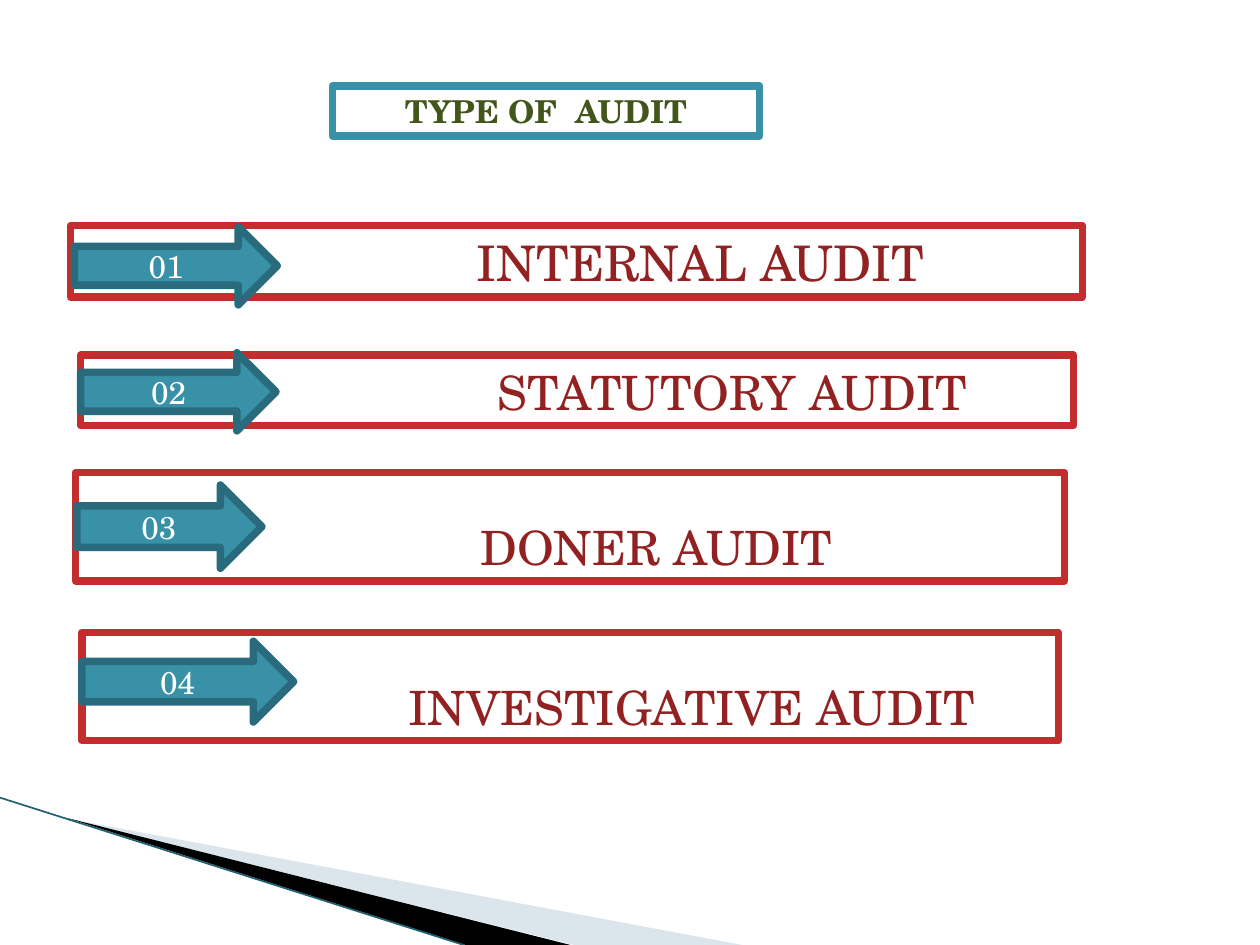
from lxml.etree import SubElement
from pptx import Presentation
from pptx.dml.color import RGBColor
from pptx.enum.shapes import MSO_CONNECTOR, MSO_SHAPE
from pptx.enum.text import MSO_ANCHOR, MSO_AUTO_SIZE, PP_ALIGN
from pptx.oxml.ns import qn
from pptx.util import Pt

FONT = "TeX Gyre Schola"
WHITE = RGBColor(0xFF, 0xFF, 0xFF)
BLACK = RGBColor(0, 0, 0)
TEAL = RGBColor(0x38, 0x91, 0xA7)
DARK_TEAL = RGBColor(0x29, 0x6B, 0x7C)
EDGE_TEAL = RGBColor(0x20, 0x60, 0x70)
PALE_BLUE = RGBColor(0xA3, 0xC2, 0xCE)
RED = RGBColor(0xC3, 0x2D, 0x2E)
DARK_RED = RGBColor(0x92, 0x22, 0x22)
GREEN = RGBColor(0x42, 0x55, 0x1A)
OUTLINE = 4.33

TITLE = "TYPE OF  AUDIT"
TITLE_BOX = (190, 49, 244, 28.8)
# name, text size, text left, bar box, arrow box (left, top, width, height)
AUDITS = [
    ("INTERNAL AUDIT", 28, 272.5, (40.3, 128.9, 578.2, 41), (42.5, 129.6, 116, 44.6)),
    ("STATUTORY AUDIT", 27, 284.5, (46.1, 203, 567.4, 40.3), (46.1, 201.6, 111.6, 44.6)),
    ("DONER AUDIT", 27, 274.5, (43.2, 270, 565.2, 61.9), (43.9, 277.2, 105.8, 47.5)),
    ("INVESTIGATIVE AUDIT", 27, 233.5, (46.8, 361.4, 558, 61.9), (46.8, 366.5, 121, 46.1)),
]
PALE_WEDGE = [(39.6, 468), (424, 540), (328, 540)]
BLACK_WEDGE = [(38.5, 467.5), (326, 540), (266, 540)]
EDGE_LINE = (0, 455.8, 265, 540)


def format_text(shape, text, size, color, alignment, anchor):
    frame = shape.text_frame
    frame.text = text
    frame.word_wrap = True
    frame.auto_size = MSO_AUTO_SIZE.NONE
    frame.vertical_anchor = anchor
    paragraph = frame.paragraphs[0]
    paragraph.alignment = alignment
    paragraph.font.name = FONT
    paragraph.font.size = Pt(size)
    paragraph.font.color.rgb = color
    return paragraph


def paint(shape, fill, line):
    shape.fill.solid()
    shape.fill.fore_color.rgb = fill
    shape.line.color.rgb = line
    shape.line.width = Pt(OUTLINE)


def add_box(slide, kind, box, fill, line):
    shape = slide.shapes.add_shape(kind, *map(Pt, box))
    shape.shadow.inherit = False
    paint(shape, fill, line)
    return shape


def add_wedge(slide, points, color):
    start, *others = [(Pt(x), Pt(y)) for x, y in points]
    builder = slide.shapes.build_freeform(*start)
    builder.add_line_segments(others)
    wedge = builder.convert_to_shape()
    wedge.shadow.inherit = False
    wedge.fill.solid()
    wedge.fill.fore_color.rgb = color
    wedge.line.fill.background()
    return wedge


def add_corner_decoration(slide):
    pale = add_wedge(slide, PALE_WEDGE, PALE_BLUE)
    color = pale._element.spPr.find(qn("a:solidFill"))[0]
    SubElement(color, qn("a:alpha"), val="40000")
    add_wedge(slide, BLACK_WEDGE, BLACK)
    edge = slide.shapes.add_connector(MSO_CONNECTOR.STRAIGHT, *map(Pt, EDGE_LINE))
    edge.line.color.rgb = EDGE_TEAL
    edge.line.width = Pt(0.95)
    SubElement(edge._element.spPr, qn("a:effectLst"))


def add_title(slide):
    title = slide.shapes.title
    title.left, title.top, title.width, title.height = map(Pt, TITLE_BOX)
    paint(title, WHITE, TEAL)
    paragraph = format_text(title, TITLE, 18, GREEN, PP_ALIGN.CENTER, MSO_ANCHOR.MIDDLE)
    paragraph.font.bold = True


def add_audit(slide, number, name, size, text_left, bar_box, arrow_box):
    bar = add_box(slide, MSO_SHAPE.RECTANGLE, bar_box, WHITE, RED)
    format_text(bar, name, size, DARK_RED, PP_ALIGN.LEFT, MSO_ANCHOR.BOTTOM)
    bar.text_frame.margin_left = Pt(text_left - bar_box[0])
    arrow = add_box(slide, MSO_SHAPE.RIGHT_ARROW, arrow_box, TEAL, DARK_TEAL)
    format_text(arrow, f"{number:02}", 18, WHITE, PP_ALIGN.CENTER, MSO_ANCHOR.MIDDLE)


def main():
    presentation = Presentation()
    presentation.slide_width, presentation.slide_height = Pt(720), Pt(540)
    slide = presentation.slides.add_slide(presentation.slide_layouts[5])
    add_corner_decoration(slide)
    add_title(slide)
    for number, audit in enumerate(AUDITS, start=1):
        add_audit(slide, number, *audit)
    presentation.save("out.pptx")


if __name__ == "__main__":
    main()
